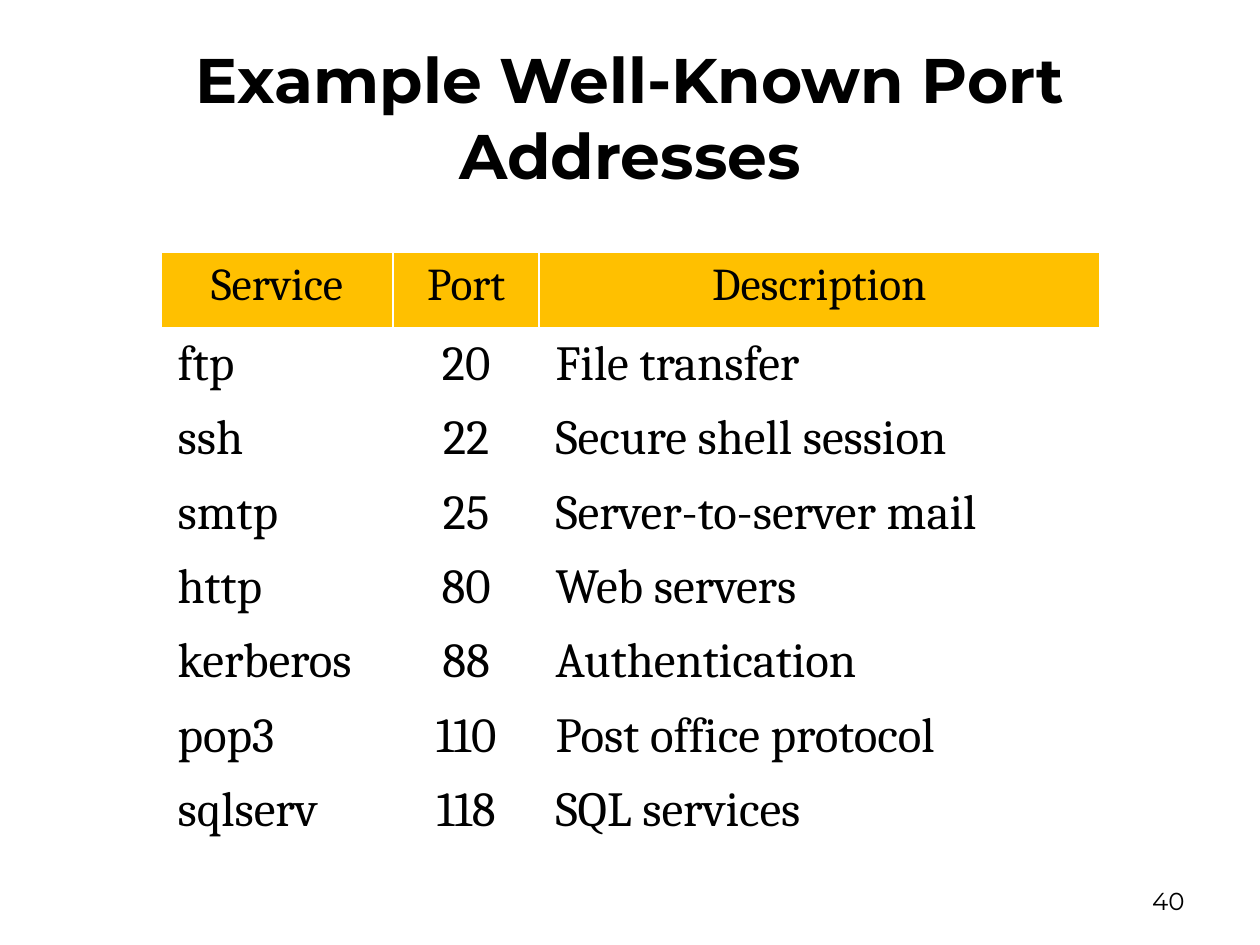
"""Build a slide with a table of well-known port addresses."""
from typing import NamedTuple

from lxml import etree
from pptx import Presentation
from pptx.dml.color import RGBColor
from pptx.enum.text import MSO_ANCHOR, PP_ALIGN
from pptx.oxml.ns import qn
from pptx.util import Inches, Pt

LEFT, CENTER, RIGHT = PP_ALIGN.LEFT, PP_ALIGN.CENTER, PP_ALIGN.RIGHT
MIDDLE = MSO_ANCHOR.MIDDLE
BLACK, WHITE, AMBER = "000000", "FFFFFF", "FFC000"
TITLE_ONLY = 5
HEADER_HEIGHT, ROW_HEIGHT = 0.61, 0.59
TITLE_FONT = {"name": "Montserrat", "size": Pt(36), "bold": True}
NUMBER_FONT = {"name": "Montserrat", "size": Pt(14)}
HEADER_FONT = {"name": "Cambria", "size": Pt(26), "bold": False}
BODY_FONT = {"name": "Cambria", "size": Pt(28), "bold": False}
CELL_FORMAT = {
    "margin_left": Inches(0.13),
    "margin_right": Inches(0.13),
    "margin_top": Inches(0.06),
    "margin_bottom": Inches(0.06),
}


class Column(NamedTuple):
    title: str
    width: float
    align: PP_ALIGN


class Service(NamedTuple):
    name: str
    port: int
    description: str


COLUMNS = [
    Column("Service", 1.84, LEFT),
    Column("Port", 1.16, CENTER),
    Column("Description", 4.45, LEFT),
]
SERVICES = [
    Service("ftp", 20, "File transfer"),
    Service("ssh", 22, "Secure shell session"),
    Service("smtp", 25, "Server-to-server mail"),
    Service("http", 80, "Web servers"),
    Service("kerberos", 88, "Authentication"),
    Service("pop3", 110, "Post office protocol"),
    Service("sqlserv", 118, "SQL services"),
]


def color(value: str) -> RGBColor:
    """Turn a hex string into a colour."""
    return RGBColor.from_string(value)


def apply(target, values: dict) -> None:
    """Set each named attribute on the target."""
    for name, value in values.items():
        setattr(target, name, value)


def write(tf, text: str, align: PP_ALIGN, font: dict) -> None:
    """Write one formatted paragraph into a text frame."""
    p = tf.paragraphs[0]
    p.alignment = align
    r = p.add_run()
    r.text = text
    apply(r.font, font)
    r.font.color.rgb = color(BLACK)


def add_borders(cell, widths: dict) -> None:
    """Draw white cell borders, with widths in points by side."""
    tcPr = cell._tc.get_or_add_tcPr()
    for i, (side, width) in enumerate(widths.items()):
        ln = etree.Element(qn(f"a:ln{side}"), w=str(Pt(width)))
        fill = etree.SubElement(ln, qn("a:solidFill"))
        etree.SubElement(fill, qn("a:srgbClr"), val=WHITE)
        tcPr.insert(i, ln)


def fill_cell(cell, text: str, align: PP_ALIGN, font: dict, fill: str, bottom: int) -> None:
    """Format a table cell and write its text."""
    apply(cell, CELL_FORMAT)
    cell.fill.solid()
    cell.fill.fore_color.rgb = color(fill)
    add_borders(cell, {"L": 1, "R": 1, "T": 1, "B": bottom})
    write(cell.text_frame, text, align, font)


def add_title(s, text: str) -> None:
    """Place and write the slide title."""
    sp = s.shapes.title
    apply(sp, {"left": Inches(0.5), "top": Inches(0.3),
               "width": Inches(9), "height": Inches(1.25)})
    apply(sp.text_frame, {"vertical_anchor": MIDDLE, "word_wrap": True})
    write(sp.text_frame, text, CENTER, TITLE_FONT)


def add_number(s, text: str) -> None:
    """Add the page number."""
    sp = s.shapes.add_textbox(Inches(7.17), Inches(6.95), Inches(2.33), Inches(0.4))
    apply(sp.text_frame, {"vertical_anchor": MIDDLE, "word_wrap": True})
    write(sp.text_frame, text, RIGHT, NUMBER_FONT)


def add_port_table(s, columns: list[Column], services: list[Service]) -> None:
    """Add the table of services and ports."""
    width = sum(column.width for column in columns)
    height = HEADER_HEIGHT + ROW_HEIGHT * len(services)
    table = s.shapes.add_table(len(services) + 1, len(columns), Inches(1.28), Inches(2),
                               Inches(width), Inches(height)).table
    table.horz_banding = False
    for i, row in enumerate(table.rows):
        row.height = Inches(ROW_HEIGHT if i else HEADER_HEIGHT)
    for j, column in enumerate(columns):
        table.columns[j].width = Inches(column.width)
        fill_cell(table.cell(0, j), column.title, CENTER, HEADER_FONT, AMBER, 3)
        for i, service in enumerate(services, 1):
            fill_cell(table.cell(i, j), str(service[j]), column.align, BODY_FONT, WHITE, 1)


def main() -> None:
    """Build and save the slide."""
    prs = Presentation()
    prs.slide_width, prs.slide_height = Inches(10), Inches(7.5)
    s = prs.slides.add_slide(prs.slide_layouts[TITLE_ONLY])
    add_title(s, "Example Well-Known Port Addresses")
    add_port_table(s, COLUMNS, SERVICES)
    add_number(s, "40")
    prs.save("out.pptx")


if __name__ == "__main__":
    main()
